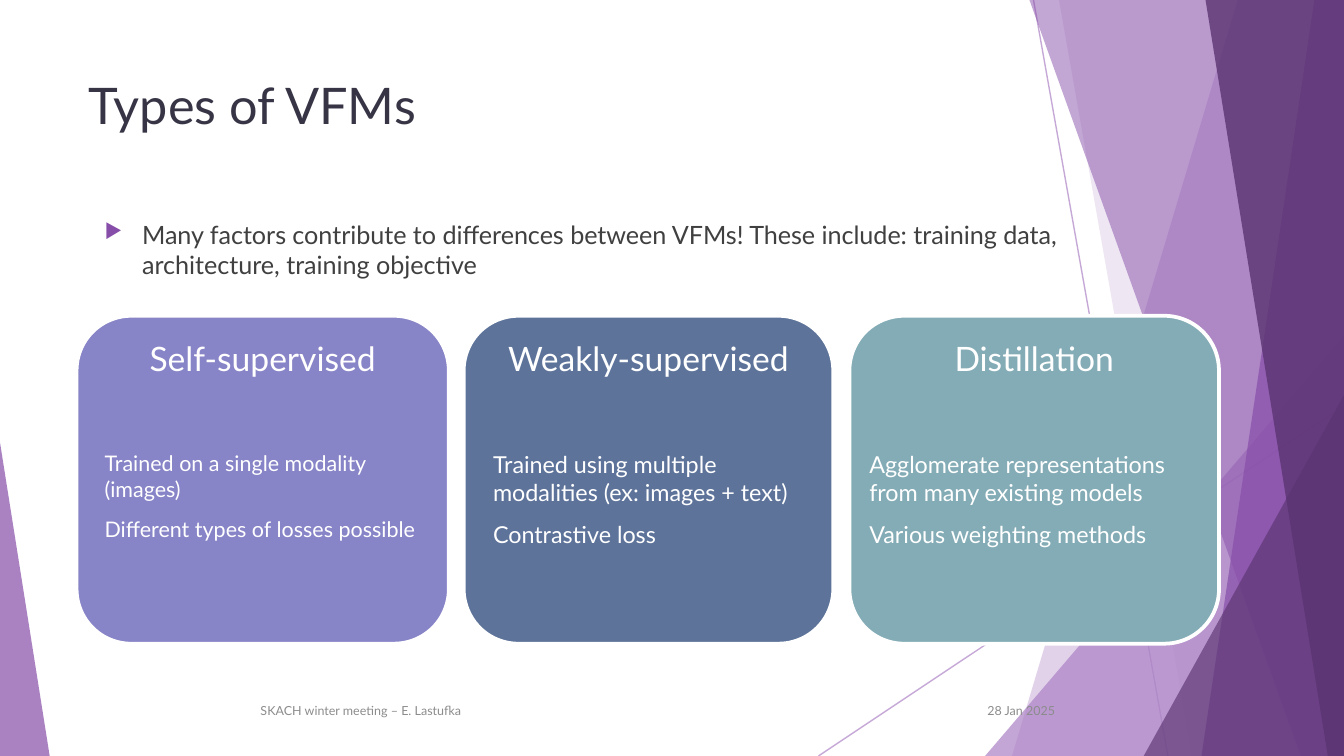
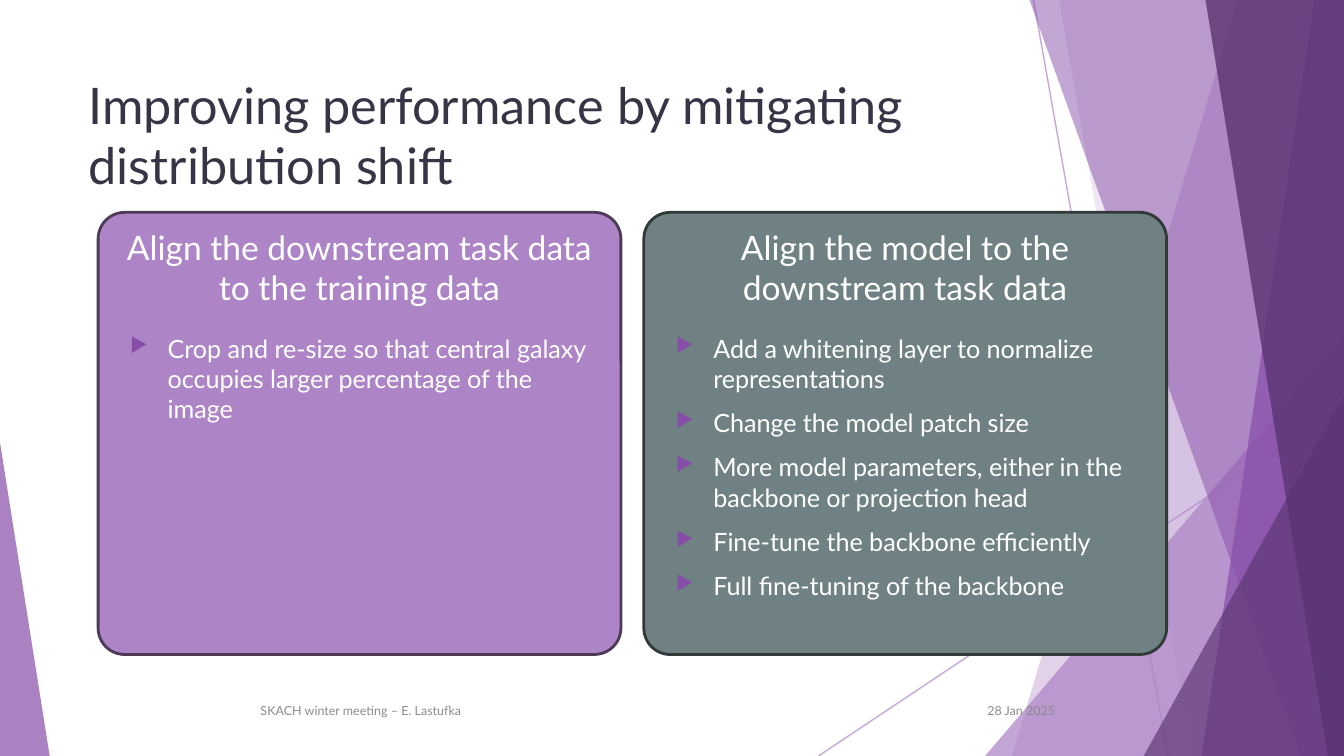
from lxml.etree import SubElement
from pptx import Presentation
from pptx.dml.color import RGBColor
from pptx.enum.shapes import MSO_CONNECTOR, MSO_SHAPE
from pptx.enum.text import MSO_ANCHOR, PP_ALIGN
from pptx.oxml.ns import qn
from pptx.util import Inches, Pt

WHITE = RGBColor(0xFF, 0xFF, 0xFF)
LILAC = RGBColor(0xAD, 0x84, 0xC6)
PURPLE = RGBColor(0x87, 0x4E, 0xA9)
DARK_PURPLE = RGBColor(0x5A, 0x34, 0x71)
LILAC_EDGE = RGBColor(0x4C, 0x3A, 0x57)
PERIWINKLE = RGBColor(0x87, 0x84, 0xC7)
SLATE_BLUE = RGBColor(0x5D, 0x73, 0x9A)
TEAL = RGBColor(0x84, 0xAC, 0xB6)
GREY_GREEN = RGBColor(0x6F, 0x81, 0x83)
GREY_GREEN_EDGE = RGBColor(0x31, 0x39, 0x39)
TITLE_COLOUR = RGBColor(0x37, 0x35, 0x45)
BODY_COLOUR = RGBColor(0x40, 0x40, 0x40)
FOOTER_COLOUR = RGBColor(0x8C, 0x8C, 0x8C)

FONT = "Lato"
WIDTH = 10
HEIGHT = WIDTH * 9 / 16

presentation = Presentation()
presentation.slide_width = Inches(WIDTH)
presentation.slide_height = Inches(HEIGHT)


def write(shape, *lines, size, colour=WHITE, align=PP_ALIGN.LEFT,
          anchor=MSO_ANCHOR.TOP, bullet=False):
    """Fill a shape with one paragraph per line."""
    frame = shape.text_frame
    frame.word_wrap = True
    frame.vertical_anchor = anchor
    for index, line in enumerate(lines):
        paragraph = frame.add_paragraph() if index else frame.paragraphs[0]
        paragraph.alignment = align
        if index:
            paragraph.space_before = Pt(7.5)
        if bullet:
            properties = paragraph._p.get_or_add_pPr()
            properties.set("marL", str(Inches(0.28)))
            properties.set("indent", str(-Inches(0.28)))
            bullet_colour = SubElement(properties, qn("a:buClr"))
            SubElement(bullet_colour, qn("a:srgbClr"), val=str(PURPLE))
            SubElement(properties, qn("a:buSzPct"), val="80000")
            SubElement(properties, qn("a:buChar"), char="▶")
        run = paragraph.add_run()
        run.text = line
        run.font.name = FONT
        run.font.size = Pt(size)
        run.font.color.rgb = colour


def paint(shape, fill, alpha=100, edge=None, edge_width=0):
    shape.shadow.inherit = False
    shape.fill.solid()
    shape.fill.fore_color.rgb = fill
    if alpha < 100:
        colour = shape._element.spPr.find(".//" + qn("a:srgbClr"))
        SubElement(colour, qn("a:alpha"), val=str(alpha * 1000))
    if edge is None:
        shape.line.fill.background()
    else:
        shape.line.color.rgb = edge
        shape.line.width = Pt(edge_width)


# Bands run to the right edge: (top x, bottom x).
# Triangles stand on the bottom edge: (left, top, width, apex).
backdrop = [
    ((9.21, 7.53), LILAC, 36),
    ((7.88, 8.87), LILAC, 20),
    ((7.33, 2.5, 2.67, 1), LILAC, 72),
    ((7.66, 9.68), PURPLE, 50),
    ((9.78, 8.94), PURPLE, 70),
    ((8.97, 9.88), DARK_PURPLE, 80),
    ((8.51, 2.94, 1.49, 1), DARK_PURPLE, 66),
    ((0, 3.29, 0.37, 0), PURPLE, 70),
]
backdrop_lines = [(7.69, 0, 8.69, HEIGHT), (10, 3.02, 6.09, HEIGHT)]
titles = [
    ("Types of VFMs", 7.05),
    ("Improving performance by mitigating distribution shift", 7.77),
]
footers = [
    ("28 Jan 2025", 7.2, 0.75, PP_ALIGN.RIGHT),
    ("SKACH winter meeting – E. Lastufka", 1.84, 5.17, PP_ALIGN.LEFT),
]

for title, title_width in titles:
    slide = presentation.slides.add_slide(presentation.slide_layouts[6])
    for ends in backdrop_lines:
        line = slide.shapes.add_connector(MSO_CONNECTOR.STRAIGHT, *map(Inches, ends))
        line.line.color.rgb = LILAC
        line.line.width = Pt(0.75)
        colour = line._element.spPr.find(".//" + qn("a:srgbClr"))
        SubElement(colour, qn("a:alpha"), val="70000")
        SubElement(line._element.spPr, qn("a:effectLst"))
    for geometry, fill, alpha in backdrop:
        if len(geometry) == 2:
            top_x, bottom_x = geometry
            outline = slide.shapes.build_freeform(Inches(top_x), 0)
            corners = [(WIDTH, 0), (WIDTH, HEIGHT), (bottom_x, HEIGHT)]
            outline.add_line_segments([(Inches(x), Inches(y)) for x, y in corners])
            shape = outline.convert_to_shape()
        else:
            left, top, width, apex = geometry
            shape = slide.shapes.add_shape(
                MSO_SHAPE.ISOSCELES_TRIANGLE, Inches(left), Inches(top),
                Inches(width), Inches(HEIGHT - top))
            shape.adjustments[0] = apex
        paint(shape, fill, alpha)

    title_box = slide.shapes.add_textbox(
        Inches(0.56), Inches(0.5), Inches(title_width), Inches(1.08))
    write(title_box, title, size=27, colour=TITLE_COLOUR)
    for text, left, width, align in footers:
        footer = slide.shapes.add_textbox(
            Inches(left), Inches(5.14), Inches(width), Inches(0.3))
        write(footer, text, size=6.75, colour=FOOTER_COLOUR, align=align,
              anchor=MSO_ANCHOR.MIDDLE)

types_slide, shift_slide = presentation.slides

# Slide 1: three types of model
# Each: heading, fill, card left and width, text left and width, text size, lines
model_types = [
    ("Distillation", TEAL, 6.32, 2.75, 6.37, 2.76, 12.5,
     ["Agglomerate representations from many existing models",
      "Various weighting methods"]),
    ("Weakly-supervised", SLATE_BLUE, 3.45, 2.75, 3.57, 2.52, 12.5,
     ["Trained using multiple modalities (ex: images + text)",
      "Contrastive loss"]),
    ("Self-supervised", PERIWINKLE, 0.57, 2.77, 0.68, 2.56, 11.5,
     ["Trained on a single modality (images)",
      "Different types of losses possible"]),
]
for heading, fill, left, width, text_left, text_width, size, lines in model_types:
    card = types_slide.shapes.add_shape(
        MSO_SHAPE.ROUNDED_RECTANGLE, Inches(left), Inches(2.35),
        Inches(width), Inches(2.44))
    paint(card, fill, edge=WHITE, edge_width=2)
    write(card, heading, size=18, align=PP_ALIGN.CENTER)
    details = types_slide.shapes.add_textbox(
        Inches(text_left), Inches(3.3), Inches(text_width), Inches(0.78))
    write(details, *lines, size=size)

introduction = types_slide.shapes.add_textbox(
    Inches(0.68), Inches(1.58), Inches(8.03), Inches(0.71))
write(introduction,
      "Many factors contribute to differences between VFMs! These include: "
      "training data, architecture, training objective",
      size=13.5, colour=BODY_COLOUR, bullet=True)

# Slide 2: two ways to reduce the shift
alignments = [
    ("Align the downstream task data to the training data", LILAC, LILAC_EDGE,
     ["Crop and re-size so that central galaxy occupies larger percentage of the image"]),
    ("Align the model to the downstream task data", GREY_GREEN, GREY_GREEN_EDGE,
     ["Add a whitening layer to normalize representations",
      "Change the model patch size",
      "More model parameters, either in the backbone or projection head",
      "Fine-tune the backbone efficiently",
      "Full fine-tuning of the backbone"]),
]
for column, (heading, fill, edge, lines) in enumerate(alignments):
    left = 0.73 + column * 4.06
    card = shift_slide.shapes.add_shape(
        MSO_SHAPE.ROUNDED_RECTANGLE, Inches(left), Inches(1.58),
        Inches(3.89), Inches(3.29))
    card.adjustments[0] = 0.06
    paint(card, fill, edge=edge, edge_width=1.5)
    write(card, heading, size=18, align=PP_ALIGN.CENTER)
    details = shift_slide.shapes.add_textbox(
        Inches(left + 0.14), Inches(2.43), Inches(3.6), Inches(2.26))
    write(details, *lines, size=13.5, bullet=True)

presentation.save("out.pptx")
